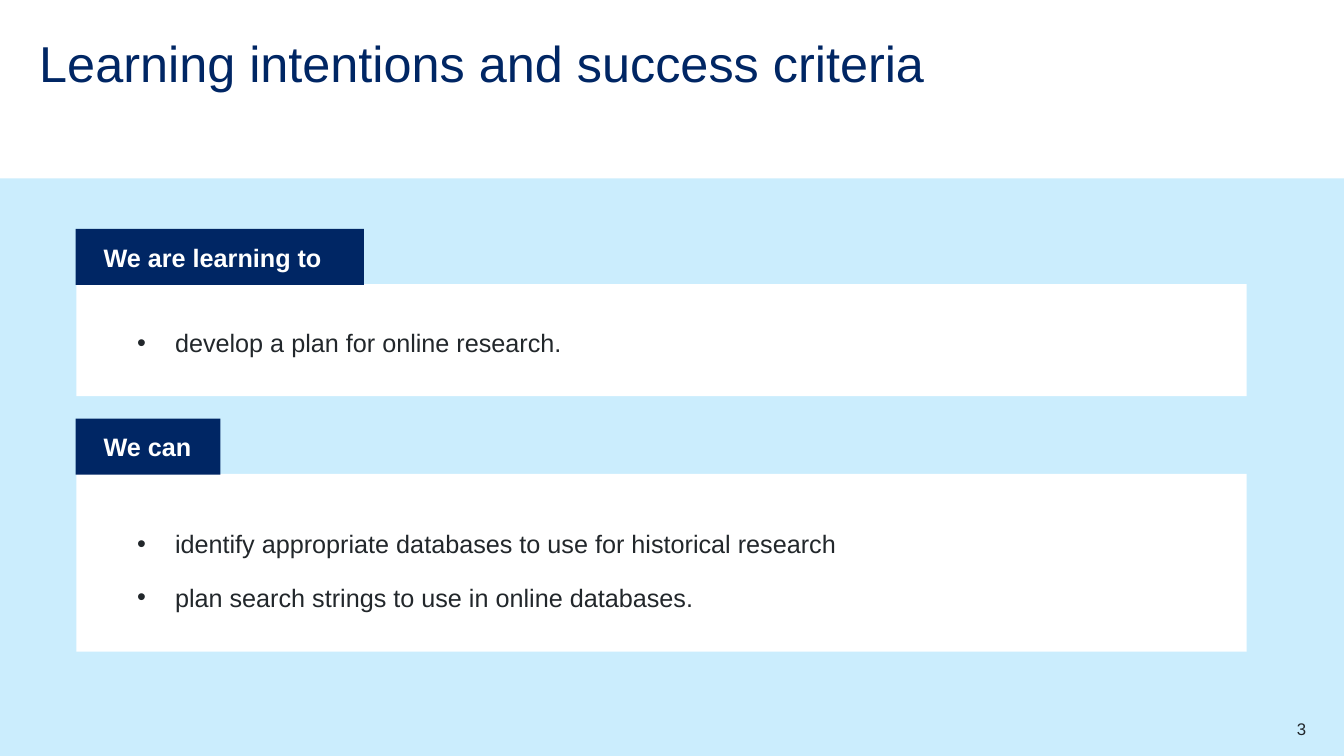
from pptx import Presentation
from pptx.dml.color import RGBColor
from pptx.enum import shapes, text
from pptx.util import Pt

NAVY, SKY, WHITE, INK = "002664", "CBEDFD", "FFFFFF", "22272B"


def add_rect(s, x, y, w, h, color):
    sp = s.shapes.add_shape(shapes.MSO_SHAPE.RECTANGLE, Pt(x), Pt(y), Pt(w), Pt(h))
    sp.shadow.inherit = False
    sp.fill.solid()
    sp.fill.fore_color.rgb = RGBColor.from_string(color)
    sp.line.fill.background()
    return sp


def write(sp, lines, size=18, color=INK, bold=False, align=text.PP_ALIGN.LEFT,
          anchor=text.MSO_ANCHOR.TOP, inset=0, spacing=1.0, after=0, hang=0):
    """Fill a shape with one paragraph per line; hang is the bullet indent."""
    tf = sp.text_frame
    tf.word_wrap = True
    tf.auto_size = text.MSO_AUTO_SIZE.NONE
    tf.vertical_anchor = anchor
    tf.margin_left = Pt(inset)
    tf.margin_top = tf.margin_right = tf.margin_bottom = 0
    tf.text = "\n".join(lines)
    for p in tf.paragraphs:
        p.alignment = align
        p.line_spacing = spacing
        p.space_before, p.space_after = Pt(0), Pt(after)
        if hang:
            pPr = p._p.get_or_add_pPr()
            pPr.set("marL", str(Pt(hang)))
            pPr.set("indent", str(-Pt(hang)))
        f = p.runs[0].font
        f.name, f.size, f.bold = "Arial", Pt(size), bold
        f.color.rgb = RGBColor.from_string(color)


prs = Presentation()
prs.slide_width, prs.slide_height = Pt(960), Pt(540)
s = prs.slides.add_slide(prs.slide_layouts.get_by_name("Two Content"))
title, *bodies = s.placeholders

title.left, title.top, title.width, title.height = Pt(28), Pt(28), Pt(808), Pt(41)
write(title, ["Learning intentions and success criteria"], size=36, color=NAVY, spacing=0.9)

add_rect(s, 0, 127.5, 960, 412.5, SKY)

# heading, heading width, card top, card height, list top, list height, list items
sections = [
    ("We are learning to", 206, 203, 80, 223.2, 29,
     ["develop a plan for online research."]),
    ("We can", 103.5, 338.5, 127, 366.5, 68,
     ["identify appropriate databases to use for historical research",
      "plan search strings to use in online databases."]),
]
for body, (heading, tab_w, top, card_h, list_top, list_h, items) in zip(bodies, sections):
    add_rect(s, 54.5, top, 836, card_h, WHITE)
    tab = add_rect(s, 54, top - 39.5, tab_w, 40, NAVY)
    write(tab, [heading], color=WHITE, bold=True, inset=20, anchor=text.MSO_ANCHOR.MIDDLE)
    body.left, body.top, body.width, body.height = Pt(98), Pt(list_top), Pt(740), Pt(list_h)
    write(body, items, spacing=1.5, after=6, hang=27)
    s.shapes.element.append(body.element)  # bring the list in front of its card

number = s.shapes.add_textbox(Pt(876), Pt(513.5), Pt(57), Pt(14.5))
write(number, ["3"], size=12, align=text.PP_ALIGN.RIGHT)

prs.save("out.pptx")
